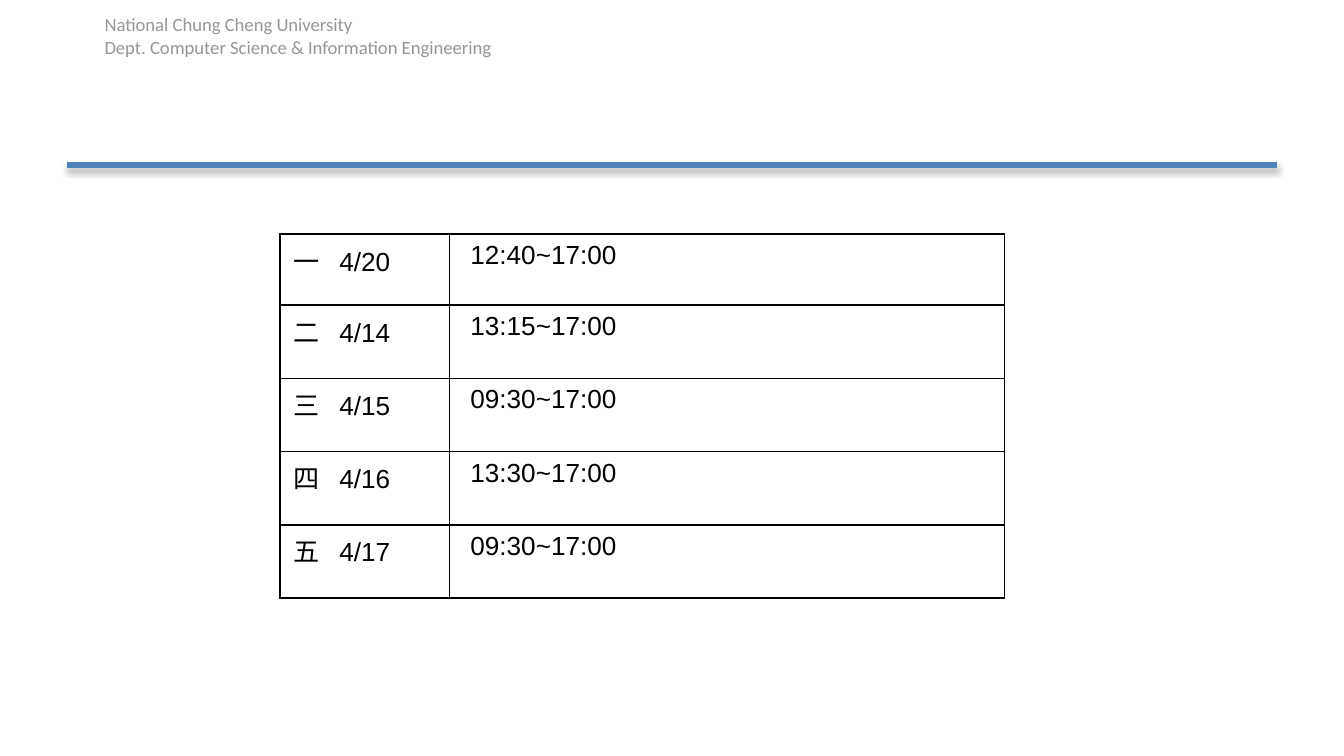
from lxml.etree import SubElement
from pptx import Presentation
from pptx.dml.color import RGBColor
from pptx.enum.shapes import MSO_CONNECTOR
from pptx.oxml import parse_xml
from pptx.oxml.ns import nsdecls, qn
from pptx.util import Pt

EMU_PER_PX = 4572
BLACK = RGBColor(0x00, 0x00, 0x00)
GRAY = RGBColor(0x96, 0x96, 0x96)
BLUE = RGBColor(0x4F, 0x81, 0xBD)
HEADER = ["National Chung Cheng University",
          "Dept. Computer Science & Information Engineering"]
HOURS = [
    ("一", "4/20", "12:40~17:00"),
    ("二", "4/14", "13:15~17:00"),
    ("三", "4/15", "09:30~17:00"),
    ("四", "4/16", "13:30~17:00"),
    ("五", "4/17", "09:30~17:00"),
]


def px(n):
    return n * EMU_PER_PX


def write(tf, lines, *, font, size, color, tab=None):
    for i, line in enumerate(lines):
        p = tf.paragraphs[0] if i == 0 else tf.add_paragraph()
        if tab:
            tabs = SubElement(p._p.get_or_add_pPr(), qn("a:tabLst"))
            SubElement(tabs, qn("a:tab"), pos=str(px(tab)), algn="l")
        r = p.add_run()
        r.text = line
        r.font.name = font
        r.font.size = Pt(size)
        r.font.color.rgb = color


def add_header(s):
    tf = s.shapes.add_textbox(px(136), px(10), px(680), px(66)).text_frame
    tf.word_wrap = True
    write(tf, HEADER, font="Calibri", size=10, color=GRAY)


def add_rule(s):
    rule = s.shapes.add_connector(MSO_CONNECTOR.STRAIGHT,
                                  px(100), px(246), px(1900), px(246))
    rule.line.color.rgb = BLUE
    rule.line.width = Pt(3)
    rule._element.spPr.append(parse_xml(
        f'<a:effectLst {nsdecls("a")}>'
        f'<a:outerShdw blurRad="{Pt(3.1)}" dist="{Pt(1.8)}" dir="5400000" rotWithShape="0">'
        '<a:srgbClr val="000000"><a:alpha val="35000"/></a:srgbClr>'
        '</a:outerShdw></a:effectLst>'))


def format_cell(cell):
    cell.fill.background()
    tcPr = cell._tc.get_or_add_tcPr()
    for i, side in enumerate(("lnL", "lnR", "lnT", "lnB")):
        tcPr.insert(i, parse_xml(
            f'<a:{side} {nsdecls("a")} w="{Pt(1)}"><a:solidFill>'
            f'<a:srgbClr val="{BLACK}"/></a:solidFill></a:{side}>'))


def add_hours_table(s):
    table = s.shapes.add_table(len(HOURS), 2, px(417), px(348),
                               px(1078), px(542)).table
    table.first_row = table.horz_banding = False
    for column, width in zip(table.columns, (252, 826)):
        column.width = px(width)
    for i, (day, date, hours) in enumerate(HOURS):
        table.rows[i].height = px(106 if i == 0 else 109)
        day_cell, hours_cell = table.rows[i].cells
        hours_cell.margin_left = px(31)
        for cell, text, tab in ((day_cell, f"{day}\t{date}", 68),
                                (hours_cell, hours, None)):
            format_cell(cell)
            write(cell.text_frame, [text], font="Arial", size=14,
                  color=BLACK, tab=tab)


def main():
    prs = Presentation()
    prs.slide_width, prs.slide_height = px(2000), px(1125)
    s = prs.slides.add_slide(prs.slide_layouts[6])
    add_header(s)
    add_rule(s)
    add_hours_table(s)
    prs.save("out.pptx")


if __name__ == "__main__":
    main()
